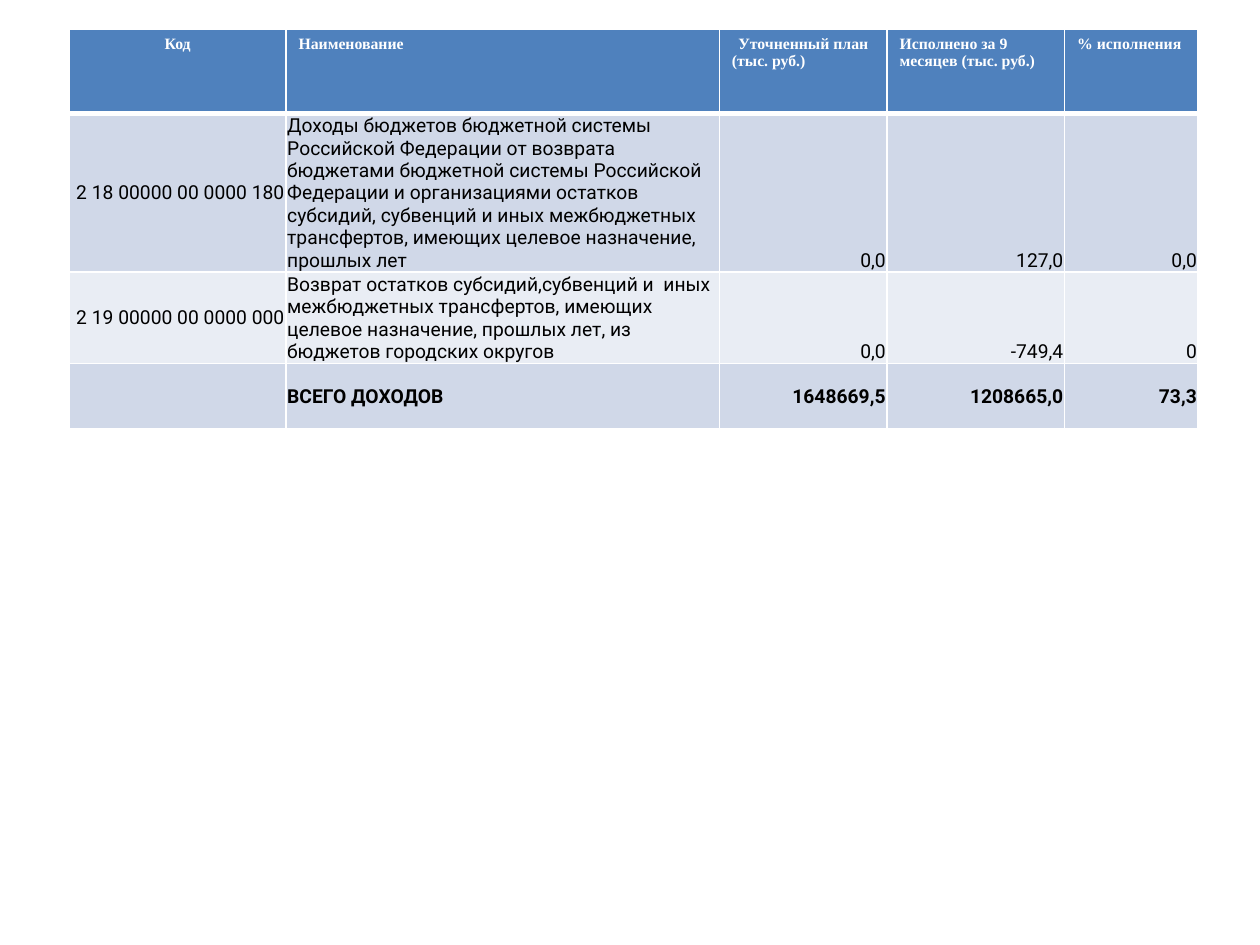
from dataclasses import dataclass

from lxml import etree
from pptx import Presentation
from pptx.dml.color import RGBColor
from pptx.enum.text import MSO_ANCHOR, PP_ALIGN
from pptx.oxml.ns import qn
from pptx.util import Inches, Pt

LEFT, CENTER, RIGHT = PP_ALIGN.LEFT, PP_ALIGN.CENTER, PP_ALIGN.RIGHT
TOP, MIDDLE, BOTTOM = MSO_ANCHOR.TOP, MSO_ANCHOR.MIDDLE, MSO_ANCHOR.BOTTOM
BLANK_LAYOUT = 6


@dataclass(frozen=True)
class Theme:
    header_fill: str = "4F81BD"
    band_fills: tuple = ("D0D8E8", "E9EDF4")
    border: str = "FFFFFF"
    header_text: str = "FFFFFF"
    body_text: str = "000000"
    header_font: str = "Times New Roman"
    body_font: str = "Roboto"
    header_size: int = 9
    body_size: int = 11
    thin: int = 1
    thick: int = 3


class Page:
    """Holds the theme and the slide being built."""

    def __init__(self, slide, theme):
        self.slide = slide
        self.theme = theme

    def table(self, left, top, widths, heights):
        frame = self.slide.shapes.add_table(
            len(heights), len(widths), Inches(left), Inches(top),
            Inches(sum(widths)), Inches(sum(heights)))
        for column, width in zip(frame.table.columns, widths):
            column.width = Inches(width)
        for row, height in zip(frame.table.rows, heights):
            row.height = Inches(height)
        return frame.table

    def borders(self, cell, top, bottom):
        props = cell._tc.get_or_add_tcPr()
        thin = self.theme.thin
        sides = (("L", thin), ("R", thin), ("T", top), ("B", bottom))
        for place, (side, width) in enumerate(sides):
            line = etree.Element(qn(f"a:ln{side}"), w=str(Pt(width)))
            fill = etree.SubElement(line, qn("a:solidFill"))
            etree.SubElement(fill, qn("a:srgbClr"), val=self.theme.border)
            props.insert(place, line)

    def paint(self, cell, color):
        cell.fill.solid()
        cell.fill.fore_color.rgb = RGBColor.from_string(color)

    def add_lines(self, cell, lines, font, size, color, bold):
        """Fill a cell with (text, alignment) paragraphs."""
        frame = cell.text_frame
        for number, (text, align) in enumerate(lines):
            para = frame.add_paragraph() if number else frame.paragraphs[0]
            para.alignment = align
            span = para.add_run()
            span.text = text
            span.font.name = font
            span.font.size = Pt(size)
            span.font.bold = bold
            span.font.color.rgb = RGBColor.from_string(color)

    def header_cell(self, cell, lines):
        theme = self.theme
        self.paint(cell, theme.header_fill)
        self.borders(cell, theme.thin, theme.thick)
        self.add_lines(cell, lines, theme.header_font, theme.header_size,
                       theme.header_text, True)

    def body_cell(self, cell, text, align, anchor, row, bold):
        theme = self.theme
        self.paint(cell, theme.band_fills[row % 2])
        self.borders(cell, theme.thin if row else theme.thick, theme.thin)
        if not text:
            return
        cell.margin_left = cell.margin_right = cell.margin_top = Inches(0.01)
        cell.margin_bottom = 0
        cell.vertical_anchor = anchor
        self.add_lines(cell, [(text, align)], theme.body_font,
                       theme.body_size, theme.body_text, bold)


HEADERS = [
    [("Код", CENTER)],
    [("Наименование", LEFT)],
    [("Уточненный план", CENTER), ("(тыс. руб.)", LEFT)],
    [("Исполнено за 9 месяцев (тыс. руб.)", LEFT)],
    [("% исполнения", LEFT)],
]
COLUMN_ALIGNS = (RIGHT, LEFT, RIGHT, RIGHT, RIGHT)

# Cell texts, anchor of the name, anchor of the figures, bold
ROWS = [
    (("2 18 00000 00 0000 180",
      "Доходы бюджетов бюджетной системы Российской Федерации от возврата "
      "бюджетами бюджетной системы Российской Федерации и организациями "
      "остатков субсидий, субвенций и иных межбюджетных трансфертов, "
      "имеющих целевое назначение, прошлых лет",
      "0,0", "127,0", "0,0"), MIDDLE, BOTTOM, False),
    (("2 19 00000 00 0000 000",
      "Возврат остатков субсидий,субвенций и  иных межбюджетных "
      "трансфертов, имеющих целевое назначение, прошлых лет, из бюджетов "
      "городских округов",
      "0,0", "-749,4", "0"), TOP, BOTTOM, False),
    (("", "ВСЕГО ДОХОДОВ", "1648669,5", "1208665,0", "73,3"),
     MIDDLE, MIDDLE, True),
]


def main():
    deck = Presentation()
    deck.slide_width, deck.slide_height = Inches(10), Inches(7.5)
    slide = deck.slides.add_slide(deck.slide_layouts[BLANK_LAYOUT])
    page = Page(slide, Theme())

    # Budget income table
    table = page.table(0.55, 0.23, widths=(1.72, 3.44, 1.33, 1.41, 1.06),
                       heights=(0.67, 1.26, 0.72, 0.52))

    # Header row
    for column, lines in enumerate(HEADERS):
        page.header_cell(table.cell(0, column), lines)

    # Income lines and total
    for row, (texts, name_anchor, figure_anchor, bold) in enumerate(ROWS):
        anchors = (MIDDLE, name_anchor) + (figure_anchor,) * 3
        for column, text in enumerate(texts):
            page.body_cell(table.cell(row + 1, column), text,
                           COLUMN_ALIGNS[column], anchors[column], row, bold)

    deck.save("out.pptx")


if __name__ == "__main__":
    main()
